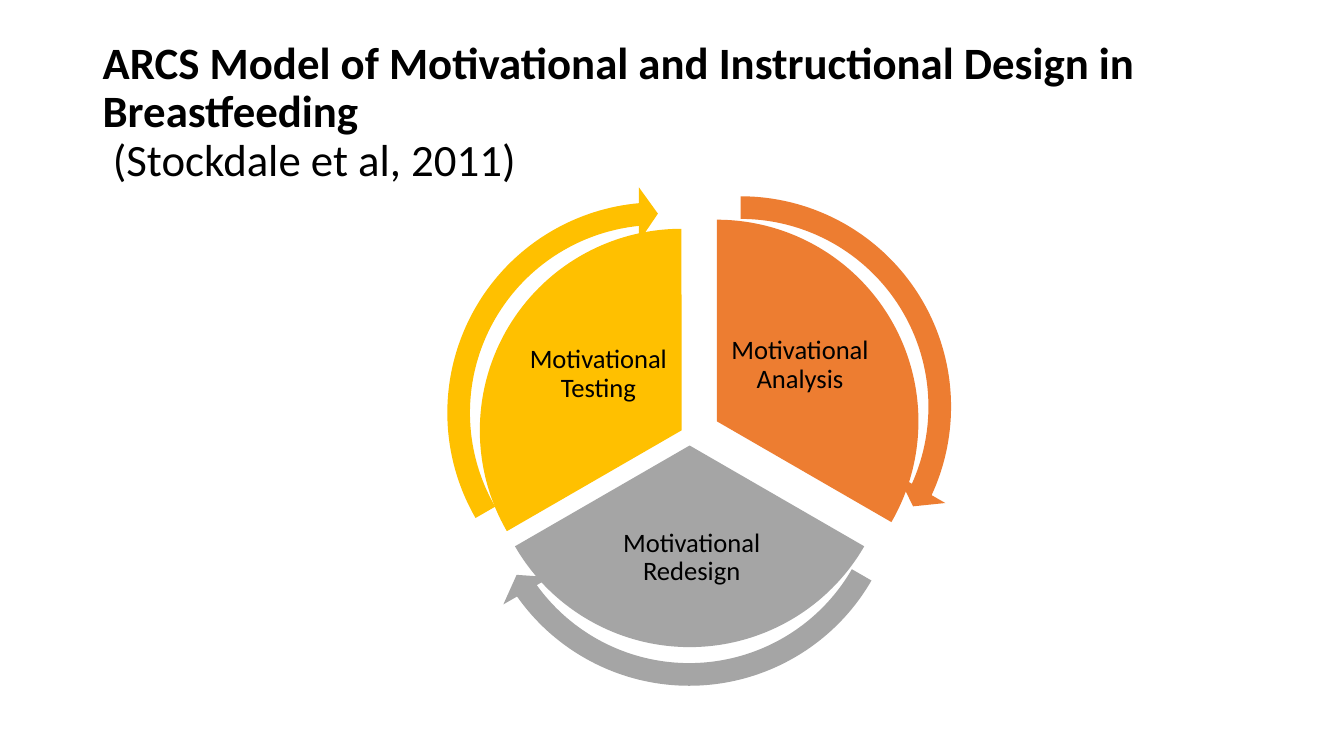
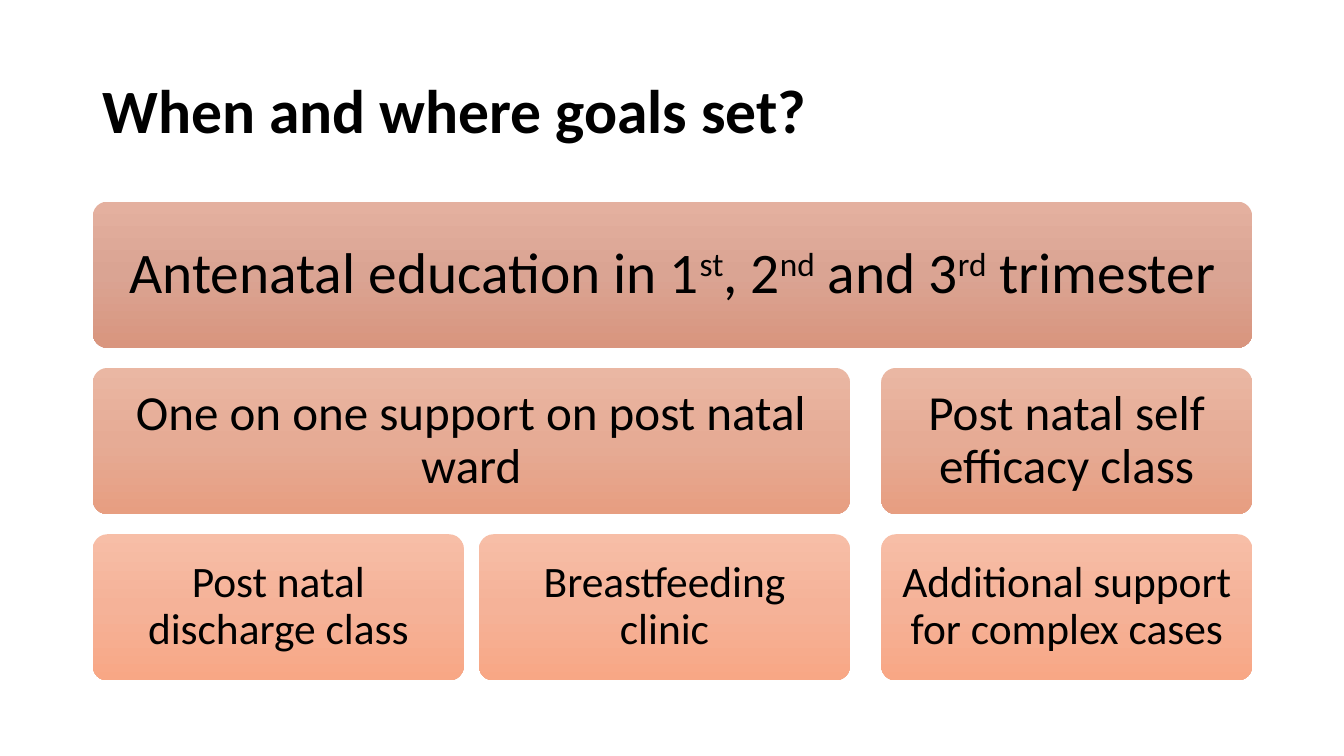
from copy import deepcopy

from pptx import Presentation
from pptx import util as u
from pptx.dml.color import RGBColor
from pptx.enum import shapes, text
from pptx.oxml.ns import qn

COLOURS = {
    "text": "000000",
    "analysis": "ED7D31",
    "redesign": "A5A5A5",
    "testing": "FFC000",
}
GRADIENTS = [
    ("E4B09F", "DAA493", "D9957E"),
    ("EAB7A3", "E6AB95", "E79E81"),
    ("F7BEA7", "F5B298", "F8A785"),
]
FONT = "Calibri"
MARGIN, CONTENT_WIDTH = 0.92, 11.5
TITLE_TOP, TITLE_HEIGHT = 0.4, 1.45

presentation = Presentation()
presentation.slide_width = u.Inches(13.33)
presentation.slide_height = u.Inches(7.5)
blank = presentation.slide_layouts[6]


def write(shape, pieces, size, inset, align):
    frame = shape.text_frame
    frame.word_wrap = True
    frame.vertical_anchor = text.MSO_ANCHOR.MIDDLE
    frame.margin_left = frame.margin_right = u.Inches(inset[0])
    frame.margin_top = frame.margin_bottom = u.Inches(inset[1])
    paragraph = frame.paragraphs[0]
    paragraph.alignment = align
    paragraph.line_spacing = 0.9
    for piece in pieces:
        paragraph.add_run().text = piece
    for run in paragraph.runs:
        run.font.name = FONT
        run.font.size = u.Pt(size)
        run.font.color.rgb = RGBColor.from_string(COLOURS["text"])
    return paragraph


def add_shape(slide, kind, left, top, width, height, adjustments):
    shape = slide.shapes.add_shape(kind, *map(u.Inches, (left, top, width, height)))
    shape.shadow.inherit = False
    shape.line.fill.background()
    for index, value in enumerate(adjustments):
        shape.adjustments[index] = value
    return shape


titles = [
    ("ARCS Model of Motivational and Instructional Design in Breastfeeding", " (Stockdale et al, 2011)", 32),
    ("When and where goals set?", "", 44),
]
slides = []
for heading, citation, size in titles:
    slide = presentation.slides.add_slide(blank)
    title = slide.shapes.add_textbox(*map(u.Inches, (MARGIN, TITLE_TOP, CONTENT_WIDTH, TITLE_HEIGHT)))
    paragraph = write(title, [heading], size, (0.1, 0.05), text.PP_ALIGN.LEFT)
    paragraph.runs[0].font.bold = True
    if citation:
        paragraph.add_line_break()
        run = paragraph.add_run()
        run.text = citation
        run.font.name = FONT
        run.font.size = u.Pt(size)
        run.font.color.rgb = RGBColor.from_string(COLOURS["text"])
    slides.append(slide)
cycle_slide, goals_slide = slides

PIE, ARROW = 4, 4.49
SWEEP, ARROW_SWEEP = 120, 114.54
ANGLE_UNIT = 0.6
segments = [
    ("analysis", "Motivational Analysis", (5.11, 2.18), (7.22, 3.03, 1.43, 1.19), (5.1, 1.79)),
    ("redesign", "Motivational Redesign", (4.84, 2.42), (5.79, 5.01, 2.14, 1.05), (4.59, 2.47)),
    ("testing", "Motivational Testing", (4.76, 2.27), (5.22, 3.12, 1.43, 1.19), (4.28, 1.85)),
]
starts = [(270 + SWEEP * index) % 360 for index in range(len(segments))]
for start, (colour, label, pie_corner, label_box, _) in zip(starts, segments):
    end = (start + SWEEP) % 360
    pie = add_shape(cycle_slide, shapes.MSO_SHAPE.PIE, *pie_corner, PIE, PIE,
                    (start * ANGLE_UNIT, end * ANGLE_UNIT))
    pie.fill.solid()
    pie.fill.fore_color.rgb = RGBColor.from_string(COLOURS[colour])
    label_shape = cycle_slide.shapes.add_textbox(*map(u.Inches, label_box))
    write(label_shape, [label], 19, (0.03, 0.03), text.PP_ALIGN.CENTER)

for start, (colour, _, _, _, arrow_corner) in zip(starts, segments):
    end = (start + ARROW_SWEEP) % 360
    arrow = add_shape(cycle_slide, shapes.MSO_SHAPE.CIRCULAR_ARROW, *arrow_corner, ARROW, ARROW,
                      (0.05, 3.28, end * ANGLE_UNIT, start * ANGLE_UNIT, 0.06))
    arrow.fill.solid()
    arrow.fill.fore_color.rgb = RGBColor.from_string(COLOURS[colour])

COLUMN_WIDTH, INNER_GAP, OUTER_GAP = 3.68, 0.15, 0.31
GRID_TOP, ROW_HEIGHT, ROW_GAP = 2, 1.45, 0.2
second = MARGIN + COLUMN_WIDTH + INNER_GAP
columns = [MARGIN, second, second + COLUMN_WIDTH + OUTER_GAP]
row_styles = [(41, 0.17), (35, 0.15), (31, 0.13)]
boxes = [
    (0, 0, 2, "Antenatal education in 1^st^, 2^nd^ and 3^rd^ trimester"),
    (1, 0, 1, "One on one support on post natal ward"),
    (2, 0, 0, "Post natal discharge class"),
    (2, 1, 1, "Breastfeeding clinic"),
    (1, 2, 2, "Post natal self efficacy class"),
    (2, 2, 2, "Additional support for complex cases"),
]
for row, first, last, label in boxes:
    width = columns[last] + COLUMN_WIDTH - columns[first]
    top = GRID_TOP + row * (ROW_HEIGHT + ROW_GAP)
    box = add_shape(goals_slide, shapes.MSO_SHAPE.ROUNDED_RECTANGLE,
                    columns[first], top, width, ROW_HEIGHT, (0.1,))
    box.fill.gradient()
    box.fill.gradient_angle = 270
    stops = box._element.spPr.find(".//" + qn("a:gsLst"))
    stops.insert(1, deepcopy(stops[0]))
    for stop, position, colour in zip(box.fill.gradient_stops, (0, 0.5, 1), GRADIENTS[row]):
        stop.position = position
        stop.color.rgb = RGBColor.from_string(colour)
    size, inset = row_styles[row]
    paragraph = write(box, label.split("^"), size, (inset, inset), text.PP_ALIGN.CENTER)
    for run in paragraph.runs[1::2]:
        run._r.get_or_add_rPr().set("baseline", "30000")

presentation.save("out.pptx")
